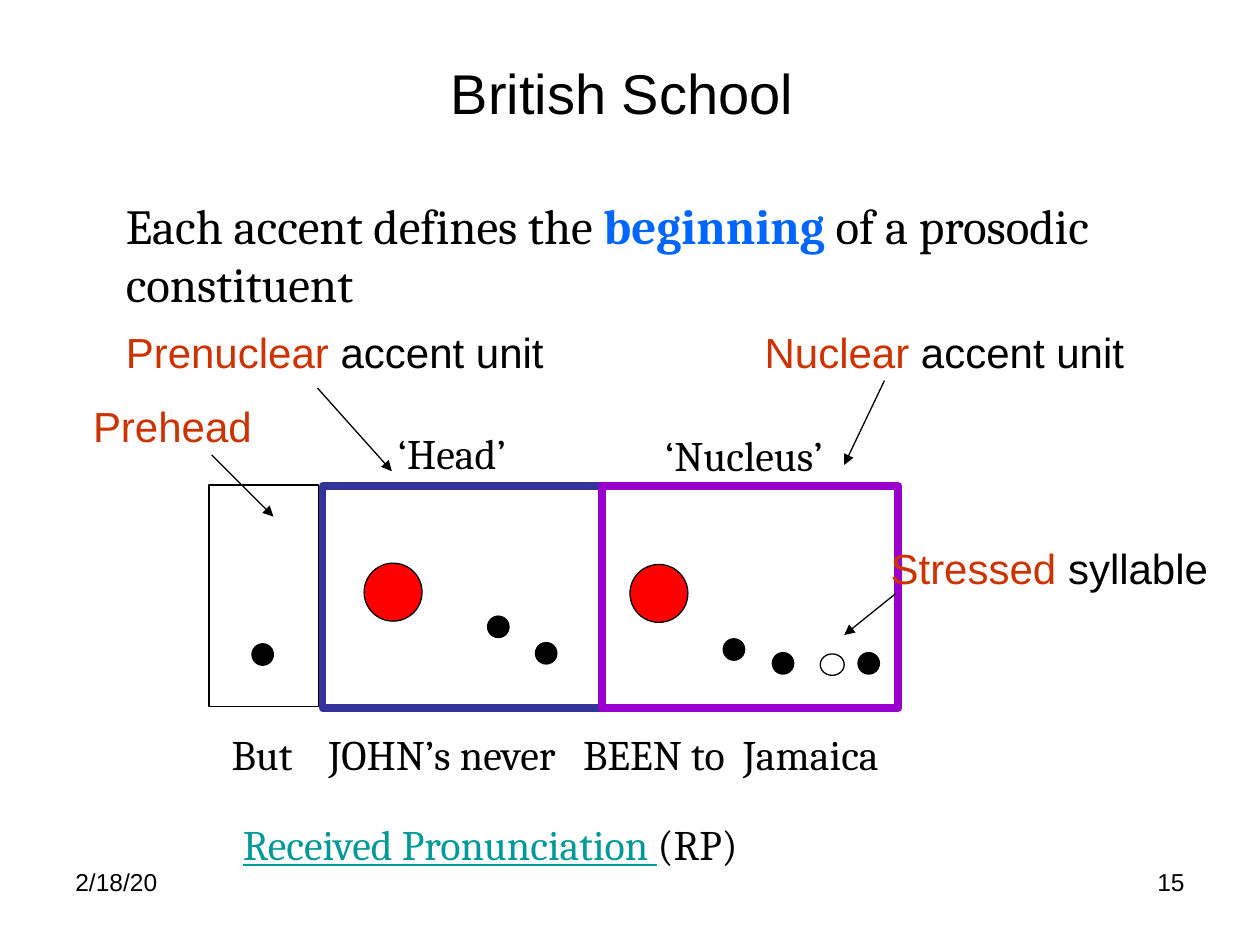
from lxml import etree
from pptx import Presentation
from pptx.dml.color import RGBColor
from pptx.enum.shapes import MSO_CONNECTOR as CONN, MSO_SHAPE as SHAPE
from pptx.enum.text import MSO_ANCHOR as ANCHOR, PP_ALIGN as ALIGN
from pptx.oxml.ns import qn
from pptx.util import Inches, Pt

BLACK, WHITE, RED = "000000", "FFFFFF", "FF0000"
RUST, BLUE, TEAL = "CC3300", "0066FF", "009999"
NAVY, PURPLE = "333399", "9900CC"
SANS, SERIF = "Arial", "Cambria"


def rgb(color):
    return RGBColor.from_string(color)


class Board:
    def __init__(self, prs):
        self.s = prs.slides.add_slide(prs.slide_layouts[6])

    def text(self, runs, x, y, w, h=0.5, size=24, font=SANS, wrap=True,
             align=ALIGN.LEFT, anchor=ANCHOR.TOP, tabs=(), parent=None):
        """Add a one-paragraph box; runs are (text, colour, *styles)."""
        sp = (parent or self.s).shapes.add_textbox(
            Inches(x), Inches(y), Inches(w), Inches(h))
        tf = sp.text_frame
        tf.word_wrap, tf.vertical_anchor = wrap, anchor
        p = tf.paragraphs[0]
        p.alignment = align
        if tabs:
            tab_list = etree.SubElement(p._p.get_or_add_pPr(), qn("a:tabLst"))
            for pos in tabs:
                etree.SubElement(tab_list, qn("a:tab"), pos=str(Inches(pos)), algn="l")
        for words, color, *styles in runs:
            r = p.add_run()
            r.text = words
            r.font.name, r.font.size = font, Pt(size)
            r.font.color.rgb = rgb(color)
            r.font.bold = "bold" in styles
            r.font.underline = "underline" in styles

    def shape(self, kind, x, y, w, h, fill=None, line=BLACK, width=0.75):
        sp = self.s.shapes.add_shape(kind, Inches(x), Inches(y), Inches(w), Inches(h))
        sp.shadow.inherit = False
        if fill:
            sp.fill.solid()
            sp.fill.fore_color.rgb = rgb(fill)
        else:
            sp.fill.background()
        sp.line.color.rgb = rgb(line)
        sp.line.width = Pt(width)

    def dot(self, x, y, w=0.17, h=0.17, fill=BLACK):
        self.shape(SHAPE.OVAL, x, y, w, h, fill)

    def arrow(self, start, end, parent):
        c = parent.shapes.add_connector(CONN.STRAIGHT, *map(Inches, start + end))
        c.line.color.rgb = rgb(BLACK)
        c.line.width = Pt(0.75)
        etree.SubElement(c.line._get_or_add_ln(), qn("a:tailEnd"), type="triangle")
        etree.SubElement(c._element.spPr, qn("a:effectLst"))

    def callout(self, runs, x, y, w, start, end):
        """Add a label grouped with the arrow that leads from it."""
        group = self.s.shapes.add_group_shape()
        self.text(runs, x, y, w, wrap=False, parent=group)
        self.arrow(start, end, group)


def main():
    prs = Presentation()
    prs.slide_width, prs.slide_height = Inches(10), Inches(7.5)
    b = Board(prs)

    b.text([("British School ", BLACK)], 0.5, 0.3, 9, 0.87, size=32,
           align=ALIGN.CENTER, anchor=ANCHOR.MIDDLE)
    b.text([("Each accent defines the ", BLACK), ("beginning ", BLUE, "bold"),
            ("of a prosodic constituent", BLACK)], 0.9, 1.5, 7.93, 1.04,
           size=28, font=SERIF)

    # Accent units
    b.shape(SHAPE.RECTANGLE, 2.56, 3.86, 2.22, 1.76, line=NAVY, width=4.5)
    b.shape(SHAPE.RECTANGLE, 4.78, 3.86, 2.35, 1.76, line=PURPLE, width=4.5)
    b.shape(SHAPE.RECTANGLE, 1.66, 3.85, 0.87, 1.76, fill=WHITE)

    # Syllables: accented, unstressed, stressed
    for x, y in [(2.89, 4.47), (5, 4.48)]:
        b.dot(x, y, 0.46, 0.46, RED)
    for x, y in [(2, 5.11), (3.87, 4.89), (4.25, 5.1),
                 (5.74, 5.07), (6.13, 5.18), (6.81, 5.18)]:
        b.dot(x, y)
    b.dot(6.51, 5.19, w=0.19, fill=WHITE)

    b.callout([("Prenuclear ", RUST), ("accent unit", BLACK)],
              0.9, 2.54, 3.52, (2.52, 3.08), (3.11, 3.74))
    b.callout([("Nuclear", RUST), (" accent unit", BLACK)],
              5.97, 2.54, 3.06, (7.02, 3.02), (6.7, 3.69))
    b.callout([("Prehead", RUST)], 0.64, 3.13, 1.46, (1.68, 3.61), (2.17, 4.1))
    b.callout([("Stressed", RUST), (" syllable", BLACK)],
              6.97, 4.26, 2.72, (7.11, 4.71), (6.7, 5.04))

    for words, x, y, w in [("‘Head’", 3.06, 3.34, 1.13),
                           ("‘Nucleus’", 5.18, 3.36, 1.52),
                           ("But", 1.74, 5.73, 0.68)]:
        b.text([(words, BLACK)], x, y, w, font=SERIF, wrap=False)
    b.text([("JOHN’s never\tBEEN to\tJamaica", BLACK)], 2.51, 5.73, 4.91,
           font=SERIF, tabs=(2.02, 3.29))
    b.text([("Received Pronunciation ", TEAL, "underline"), ("(RP)", BLACK)],
           1.83, 6.45, 6.25, font=SERIF)

    b.text([("2/18/20", BLACK)], 0.5, 6.83, 2.33, 0.52, size=14)
    b.text([("15", BLACK)], 7.17, 6.83, 2.33, 0.52, size=14, align=ALIGN.RIGHT)
    prs.save("out.pptx")


if __name__ == "__main__":
    main()
